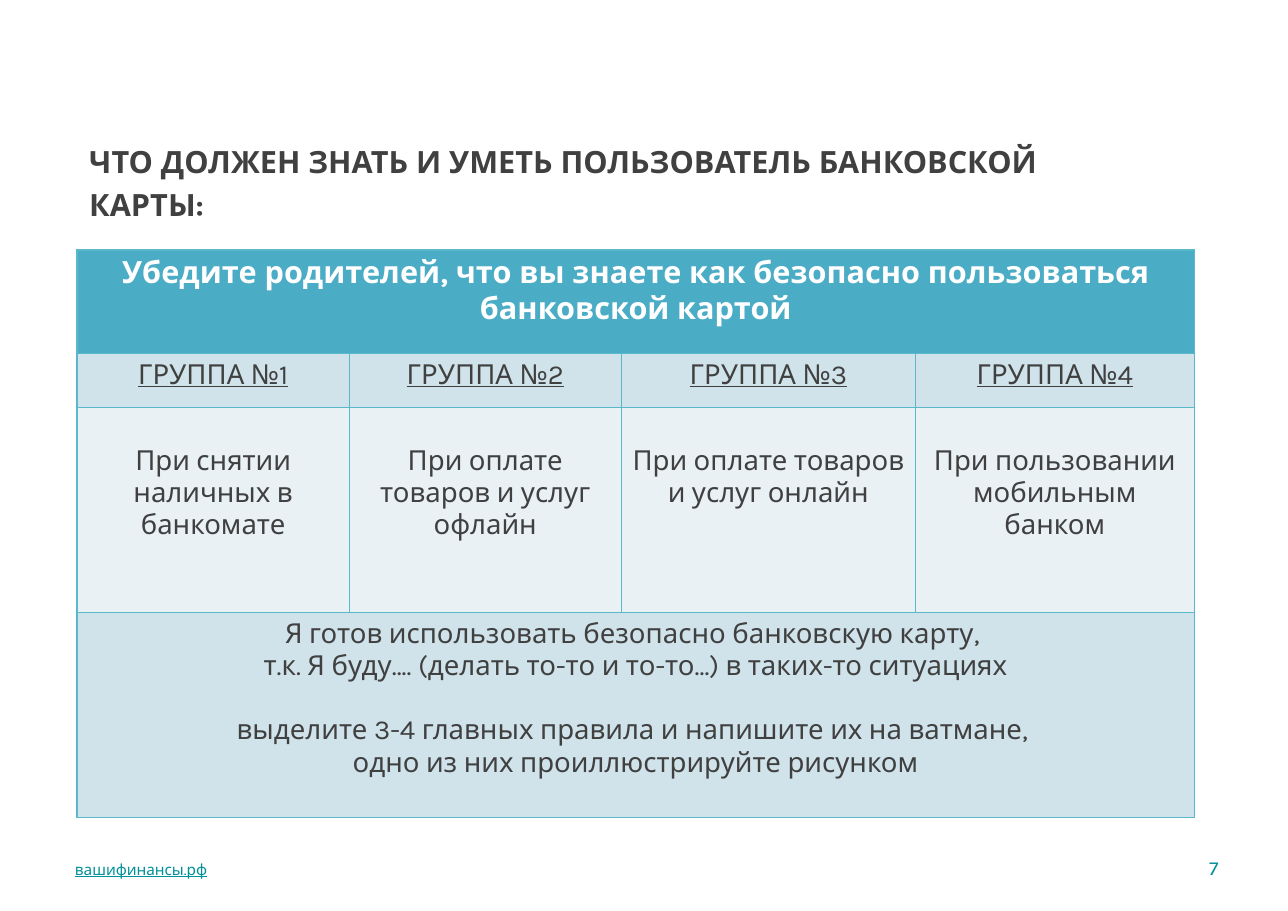
from dataclasses import dataclass

from lxml import etree
from pptx import Presentation
from pptx.dml.color import RGBColor
from pptx.enum.text import MSO_ANCHOR, MSO_AUTO_SIZE, PP_ALIGN
from pptx.oxml.ns import qn
from pptx.util import Inches, Pt

LEFT, CENTER, RIGHT = PP_ALIGN.LEFT, PP_ALIGN.CENTER, PP_ALIGN.RIGHT
TOP, MIDDLE = MSO_ANCHOR.TOP, MSO_ANCHOR.MIDDLE
NO_AUTOFIT = MSO_AUTO_SIZE.NONE
TITLE_ONLY = 5

COLORS = {
    "accent": "4BACC6",
    "border": "5AB8CB",
    "band": "D0E3EA",
    "light": "E9F1F5",
    "text": "404040",
    "white": "FFFFFF",
    "footer": "00909B",
}
FONT = "Karla"
COLUMN_WIDTHS = (2.47, 2.47, 2.67, 2.53)
ROW_HEIGHTS = (0.94, 0.49, 1.86, 1.86)
TABLE_LEFT, TABLE_TOP = 0.7, 2.27
INSET_X, INSET_Y = 0.11, 0.05
EMPTY_LINE = 0.29


@dataclass(frozen=True)
class TextStyle:
    size: float
    color: str
    align: PP_ALIGN = CENTER
    bold: bool = False
    underline: bool = False


@dataclass(frozen=True)
class Line:
    text: str
    space_before: float = 0


@dataclass(frozen=True)
class TableRow:
    """One entry in cells spans the whole width; four entries fill the columns."""
    cells: tuple[tuple[Line, ...], ...]
    style: TextStyle
    fill: str
    margin_top: float = INSET_Y


TITLE_STYLE = TextStyle(20, "text", LEFT, bold=True)
HEADER_STYLE = TextStyle(20, "white", bold=True)
GROUP_STYLE = TextStyle(18, "text", underline=True)
BODY_STYLE = TextStyle(18, "text")
SITE_STYLE = TextStyle(10, "footer", LEFT, underline=True)
NUMBER_STYLE = TextStyle(13, "footer", RIGHT)

TITLE = (
    Line("ЧТО ДОЛЖЕН ЗНАТЬ И УМЕТЬ ПОЛЬЗОВАТЕЛЬ БАНКОВСКОЙ"),
    Line("КАРТЫ:", 4),
)
TASKS = (
    "При снятии наличных в банкомате",
    "При оплате товаров и услуг офлайн",
    "При оплате товаров и услуг онлайн",
    "При пользовании мобильным банком",
)
CONCLUSION = (
    Line("Я готов использовать безопасно банковскую карту, "),
    Line("т.к. Я буду.... (делать то-то и то-то...) в таких-то ситуациях"),
    Line("выделите 3-4 главных правила и напишите их на ватмане, ", 21),
    Line("одно из них проиллюстрируйте рисунком"),
)
ROWS = (
    TableRow(((Line("Убедите родителей, что вы знаете как безопасно "
                    "пользоваться банковской картой"),),), HEADER_STYLE, "accent"),
    TableRow(tuple((Line(f"ГРУППА №{number}"),)
                   for number in range(1, len(TASKS) + 1)), GROUP_STYLE, "band"),
    TableRow(tuple((Line(task),) for task in TASKS), BODY_STYLE, "light",
             INSET_Y + EMPTY_LINE),
    TableRow((CONCLUSION,), BODY_STYLE, "band"),
)


def write_lines(text_frame, lines: tuple[Line, ...], style: TextStyle) -> None:
    for index, line in enumerate(lines):
        paragraph = text_frame.paragraphs[0] if index == 0 else text_frame.add_paragraph()
        paragraph.alignment = style.align
        paragraph.space_before = Pt(line.space_before)
        run = paragraph.add_run()
        run.text = line.text
        font_values = {"name": FONT, "size": Pt(style.size),
                       "bold": style.bold, "underline": style.underline}
        for name, value in font_values.items():
            setattr(run.font, name, value)
        run.font.color.rgb = RGBColor.from_string(COLORS[style.color])


def fill_text_shape(shape, box: tuple[float, float, float, float],
                    lines: tuple[Line, ...], style: TextStyle, anchor: MSO_ANCHOR) -> None:
    for name, value in zip(("left", "top", "width", "height"), box):
        setattr(shape, name, Inches(value))
    frame_values = {
        "word_wrap": True, "auto_size": NO_AUTOFIT, "vertical_anchor": anchor,
        "margin_left": Inches(INSET_X), "margin_right": Inches(INSET_X),
        "margin_top": Inches(INSET_Y), "margin_bottom": Inches(INSET_Y),
    }
    for name, value in frame_values.items():
        setattr(shape.text_frame, name, value)
    write_lines(shape.text_frame, lines, style)


def add_borders(cell) -> None:
    properties = cell._tc.get_or_add_tcPr()
    for side in ("lnL", "lnR", "lnT", "lnB"):
        border = etree.SubElement(properties, qn(f"a:{side}"), w=str(Pt(1)))
        solid_fill = etree.SubElement(border, qn("a:solidFill"))
        etree.SubElement(solid_fill, qn("a:srgbClr"), val=COLORS["border"])


def add_task_table(slide) -> None:
    frame = slide.shapes.add_table(
        len(ROWS), len(COLUMN_WIDTHS), Inches(TABLE_LEFT), Inches(TABLE_TOP),
        Inches(sum(COLUMN_WIDTHS)), Inches(sum(ROW_HEIGHTS)))
    table = frame.table
    for column, width in zip(table.columns, COLUMN_WIDTHS):
        column.width = Inches(width)
    for row, height in zip(table.rows, ROW_HEIGHTS):
        row.height = Inches(height)

    for row_index, content in enumerate(ROWS):
        cells = list(table.rows[row_index].cells)
        for cell in cells:
            add_borders(cell)
            cell.fill.solid()
            cell.fill.fore_color.rgb = RGBColor.from_string(COLORS[content.fill])
            cell.margin_top = Inches(content.margin_top)
        if len(content.cells) == 1:
            cells[0].merge(cells[-1])
        for cell, lines in zip(cells, content.cells):
            write_lines(cell.text_frame, lines, content.style)


def main() -> None:
    presentation = Presentation()
    presentation.slide_width = Inches(11.69)
    presentation.slide_height = Inches(8.27)
    slide = presentation.slides.add_slide(presentation.slide_layouts[TITLE_ONLY])

    fill_text_shape(slide.shapes.title, (TABLE_LEFT, 1.25, 9.6, 0.83),
                    TITLE, TITLE_STYLE, TOP)
    add_task_table(slide)
    footers = (
        ((0.57, 7.67, 3.97, 0.44), "вашифинансы.рф", SITE_STYLE),
        ((10.3, 7.66, 0.87, 0.44), "7", NUMBER_STYLE),
    )
    for box, text, style in footers:
        shape = slide.shapes.add_textbox(0, 0, 0, 0)
        fill_text_shape(shape, box, (Line(text),), style, MIDDLE)

    presentation.save("out.pptx")


if __name__ == "__main__":
    main()
